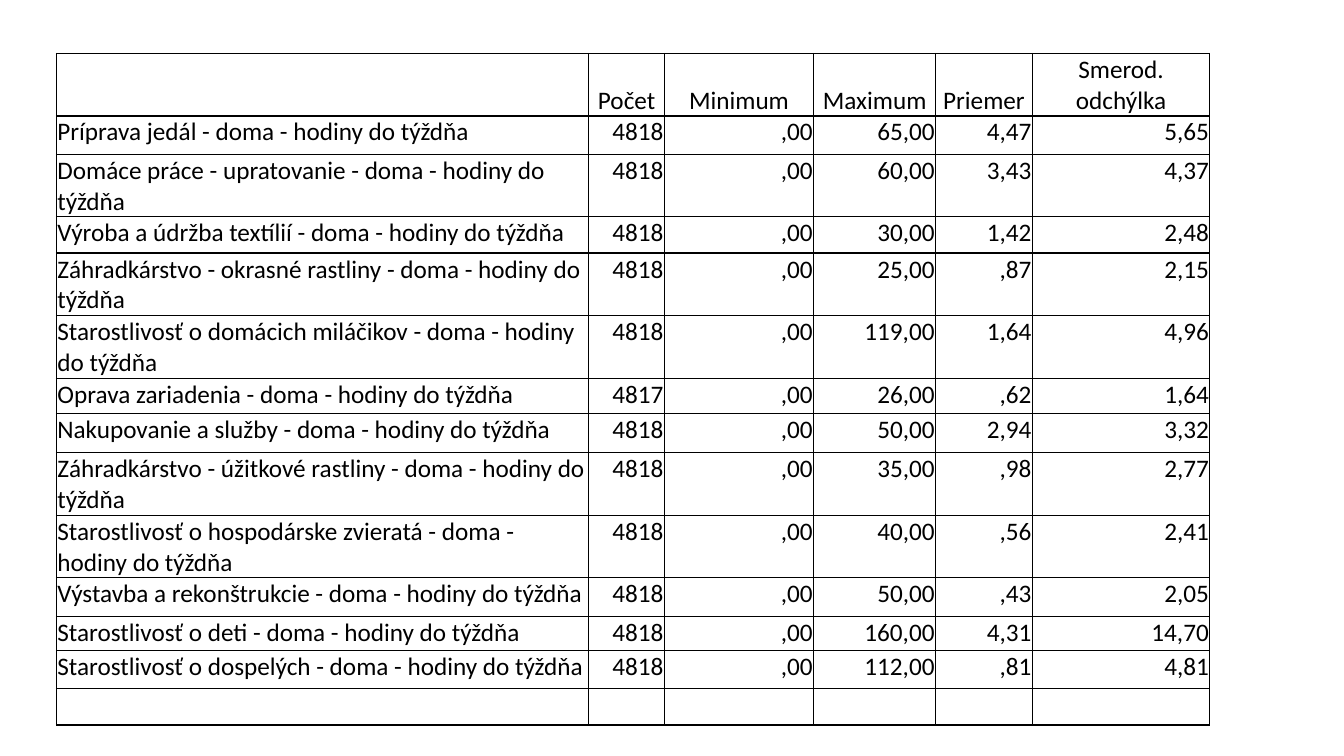
from lxml.etree import SubElement
from pptx import Presentation
from pptx.dml.color import RGBColor
from pptx.enum.text import MSO_ANCHOR, PP_ALIGN
from pptx.oxml.ns import qn
from pptx.util import Inches, Pt

BLACK = RGBColor(0, 0, 0)

# Fine grid over the slide
COLS, ROWS = 1333, 750
WIDE, HIGH = Inches(13.33), Inches(7.5)

# Table layout in grid units
LEFT, TOP, DEEP = 56, 53, 660
WIDTHS = [528, 75, 148, 121, 96, 176]
HEIGHTS = [22, 38, 35, 36, 35, 55, 35, 39, 35, 38, 38, 34, 38, 36]

# Table content
HEAD = ["", "Počet", "Minimum", "Maximum", "Priemer", "Smerod. odchýlka"]
TAIL = " - doma - hodiny do týždňa"
DATA = [
    ("Príprava jedál", "4818", "65,00", "4,47", "5,65"),
    ("Domáce práce - upratovanie", "4818", "60,00", "3,43", "4,37"),
    ("Výroba a údržba textílií", "4818", "30,00", "1,42", "2,48"),
    ("Záhradkárstvo - okrasné rastliny", "4818", "25,00", ",87", "2,15"),
    ("Starostlivosť o domácich miláčikov", "4818", "119,00", "1,64", "4,96"),
    ("Oprava zariadenia", "4817", "26,00", ",62", "1,64"),
    ("Nakupovanie a služby", "4818", "50,00", "2,94", "3,32"),
    ("Záhradkárstvo - úžitkové rastliny", "4818", "35,00", ",98", "2,77"),
    ("Starostlivosť o hospodárske zvieratá", "4818", "40,00", ",56", "2,41"),
    ("Výstavba a rekonštrukcie", "4818", "50,00", ",43", "2,05"),
    ("Starostlivosť o deti", "4818", "160,00", "4,31", "14,70"),
    ("Starostlivosť o dospelých", "4818", "112,00", ",81", "4,81"),
]
LOW = ",00"


def write(frame, text, *, font="Calibri", size=18, color=BLACK,
          align=PP_ALIGN.LEFT):
    para = frame.paragraphs[0]
    para.alignment = align
    run = para.add_run()
    run.text = text
    run.font.name = font
    run.font.size = Pt(size)
    run.font.color.rgb = color


class Sheet:
    def __init__(self, slide, line=1, pad=0.01):
        self.slide = slide
        self.line = Pt(line)
        self.pad = Inches(pad)

    def across(self, cols):
        return round(WIDE * cols / COLS)

    def down(self, rows):
        return round(HIGH * rows / ROWS)

    def border(self, cell):
        props = cell._tc.get_or_add_tcPr()
        for side in ("lnL", "lnR", "lnT", "lnB"):
            edge = SubElement(props, qn(f"a:{side}"), w=str(self.line))
            fill = SubElement(edge, qn("a:solidFill"))
            SubElement(fill, qn("a:srgbClr"), val=str(BLACK))

    def cell(self, cell, text, align, anchor):
        cell.margin_left = cell.margin_right = cell.margin_top = self.pad
        cell.margin_bottom = 0
        cell.vertical_anchor = anchor
        self.border(cell)
        cell.fill.background()
        if text:
            write(cell.text_frame, text, align=align)

    def table(self, left, top, deep, widths, heights, lines):
        frame = self.slide.shapes.add_table(
            len(heights), len(widths), self.across(left), self.down(top),
            self.across(sum(widths)), self.down(deep))
        table = frame.table
        table.first_row = table.horz_banding = False
        for col, width in zip(table.columns, widths):
            col.width = self.across(width)
        for row, height in zip(table.rows, heights):
            row.height = self.down(height)
        frame.height = self.down(deep)
        for r, line in enumerate(lines):
            anchor = MSO_ANCHOR.TOP if r else MSO_ANCHOR.BOTTOM
            for c, text in enumerate(line):
                align = PP_ALIGN.RIGHT if c else PP_ALIGN.LEFT
                if r == 0:
                    align = PP_ALIGN.CENTER
                self.cell(table.cell(r, c), text, align, anchor)


def main():
    deck = Presentation()
    deck.slide_width, deck.slide_height = WIDE, HIGH
    sheet = Sheet(deck.slides.add_slide(deck.slide_layouts[6]))

    # Header, activities and the empty closing row
    body = [[name + TAIL, count, LOW, *rest] for name, count, *rest in DATA]
    lines = [HEAD, *body, [""] * len(HEAD)]
    sheet.table(LEFT, TOP, DEEP, WIDTHS, HEIGHTS, lines)

    deck.save("out.pptx")


if __name__ == "__main__":
    main()
